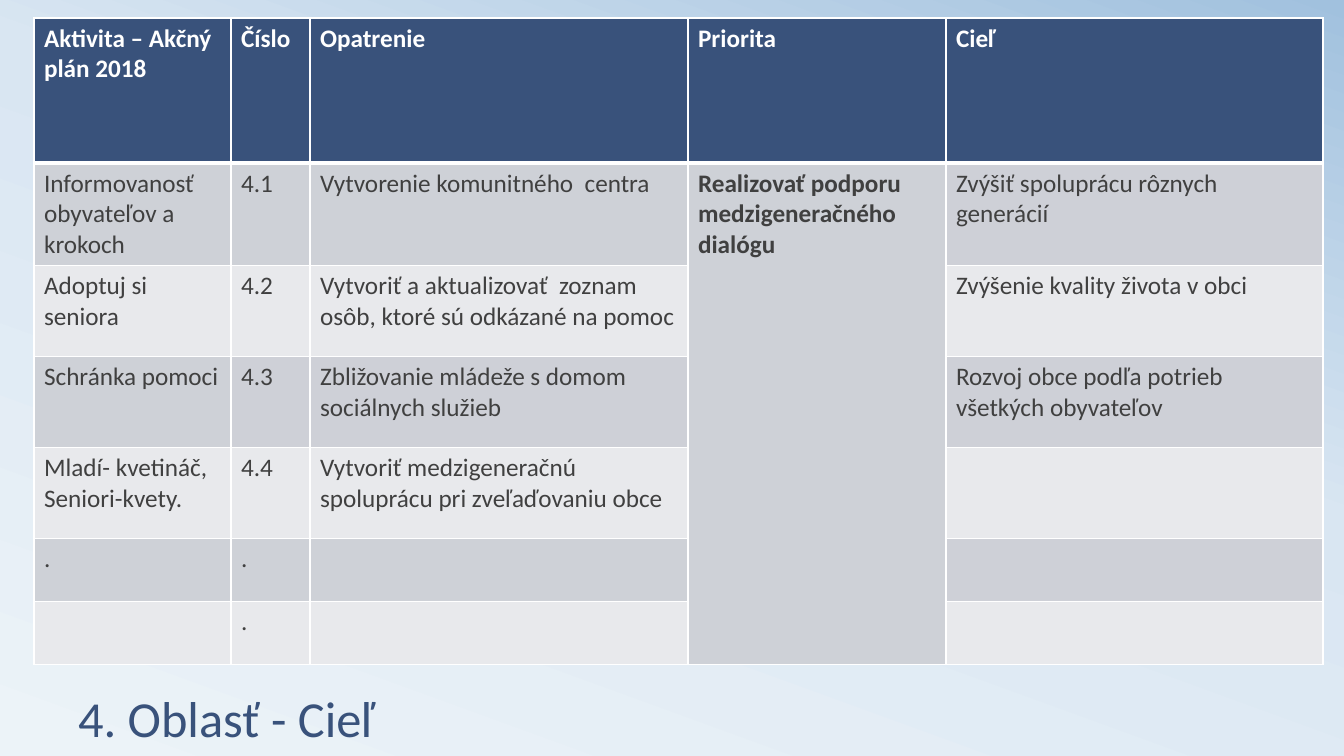
from copy import deepcopy
from lxml.etree import SubElement
from pptx import Presentation
from pptx.dml.color import RGBColor
from pptx.enum.text import MSO_ANCHOR as Anchor, PP_ALIGN as Align
from pptx.oxml.ns import qn
from pptx.util import Emu, Pt

FONT = "Calibri"
COLORS = {
    "navy": "39527B", "white": "FFFFFF", "text": "404040",
    "gray": "CED1D7", "bluish": "CED0D7", "light": "E8E9EC",
    "sky_low": "ECF3F8", "sky_mid": "D9E6F2", "sky_high": "A1C1DE",
}


def px(length):
    return Emu(round(length * 914400 / 100.8))


def add_text(paragraph, words, size, color, bold=False):
    run = paragraph.add_run()
    run.text = words
    run.font.name = FONT
    run.font.size = Pt(size)
    run.font.bold = bold
    run.font.color.rgb = RGBColor.from_string(COLORS[color])


prs = Presentation()
prs.slide_width, prs.slide_height = px(1344), px(756)
slide = prs.slides.add_slide(prs.slide_layouts[5])

sky = slide.background.fill
sky.gradient()
sky.gradient_angle = 70
stop_list = slide.element.find(".//" + qn("a:gsLst"))
stop_list.append(deepcopy(stop_list[0]))
sky_stops = [(0, "sky_low"), (0.58, "sky_mid"), (1, "sky_high")]
for stop, (position, color) in zip(sky.gradient_stops, sky_stops):
    stop.position = position
    stop.color.rgb = RGBColor.from_string(COLORS[color])

title = slide.shapes.title
title.left, title.top, title.width, title.height = px(68), px(634), px(1210), px(118)
title.text_frame.vertical_anchor = Anchor.BOTTOM
heading = title.text_frame.paragraphs[0]
heading.alignment = Align.LEFT
heading.line_spacing = 0.8
add_text(heading, "4. Oblasť - Cieľ", 36, "navy")

plan_rows = [
    ["Aktivita – Akčný plán 2018", "Číslo", "Opatrenie", "Priorita", "Cieľ"],
    ["Informovanosť obyvateľov a krokoch", "4.1", "Vytvorenie komunitného  centra",
     "Realizovať podporu medzigeneračného dialógu", "Zvýšiť spoluprácu rôznych generácií"],
    ["Adoptuj si seniora", "4.2",
     "Vytvoriť a aktualizovať  zoznam osôb, ktoré sú odkázané na pomoc", "",
     "Zvýšenie kvality života v obci"],
    ["Schránka pomoci", "4.3", "Zbližovanie mládeže s domom sociálnych služieb", "",
     "Rozvoj obce podľa potrieb všetkých obyvateľov"],
    ["Mladí- kvetináč, Seniori-kvety.", "4.4",
     "Vytvoriť medzigeneračnú spoluprácu pri zveľaďovaniu obce", "", ""],
    [".", ".", "", "", ""],
    ["", ".", "", "", ""],
]
column_widths = [197, 79, 378, 258, 377]
row_heights = [145, 102, 91, 91, 91, 63, 63]
bluish_cells = {(1, 4), (3, 1), (3, 2), (3, 4), (5, 4)}
PRIORITY = 3

plan = slide.shapes.add_table(
    len(row_heights), len(column_widths), px(34), px(18),
    px(sum(column_widths)), px(sum(row_heights))).table
for column, width in zip(plan.columns, column_widths):
    column.width = px(width)
for row, height in zip(plan.rows, row_heights):
    row.height = px(height)

for r, entries in enumerate(plan_rows):
    for c, words in enumerate(entries):
        cell = plan.cell(r, c)
        cell_props = cell._tc.get_or_add_tcPr()
        for side in ("L", "R", "T", "B"):
            thick = (r, side) in {(0, "B"), (1, "T")}
            border = SubElement(cell_props, qn("a:ln" + side), w=str(Pt(3 if thick else 1)))
            paint = SubElement(border, qn("a:solidFill"))
            SubElement(paint, qn("a:srgbClr"), val=COLORS["white"])
        if r == 0:
            shade = "navy"
        elif (r, c) in bluish_cells:
            shade = "bluish"
        else:
            shade = "gray" if r % 2 or c == PRIORITY else "light"
        cell.fill.solid()
        cell.fill.fore_color.rgb = RGBColor.from_string(COLORS[shade])
        if words:
            add_text(cell.text_frame.paragraphs[0], words, 18,
                     "white" if r == 0 else "text", r == 0 or c == PRIORITY)

plan.cell(1, PRIORITY).merge(plan.cell(len(plan_rows) - 1, PRIORITY))

prs.save("out.pptx")
